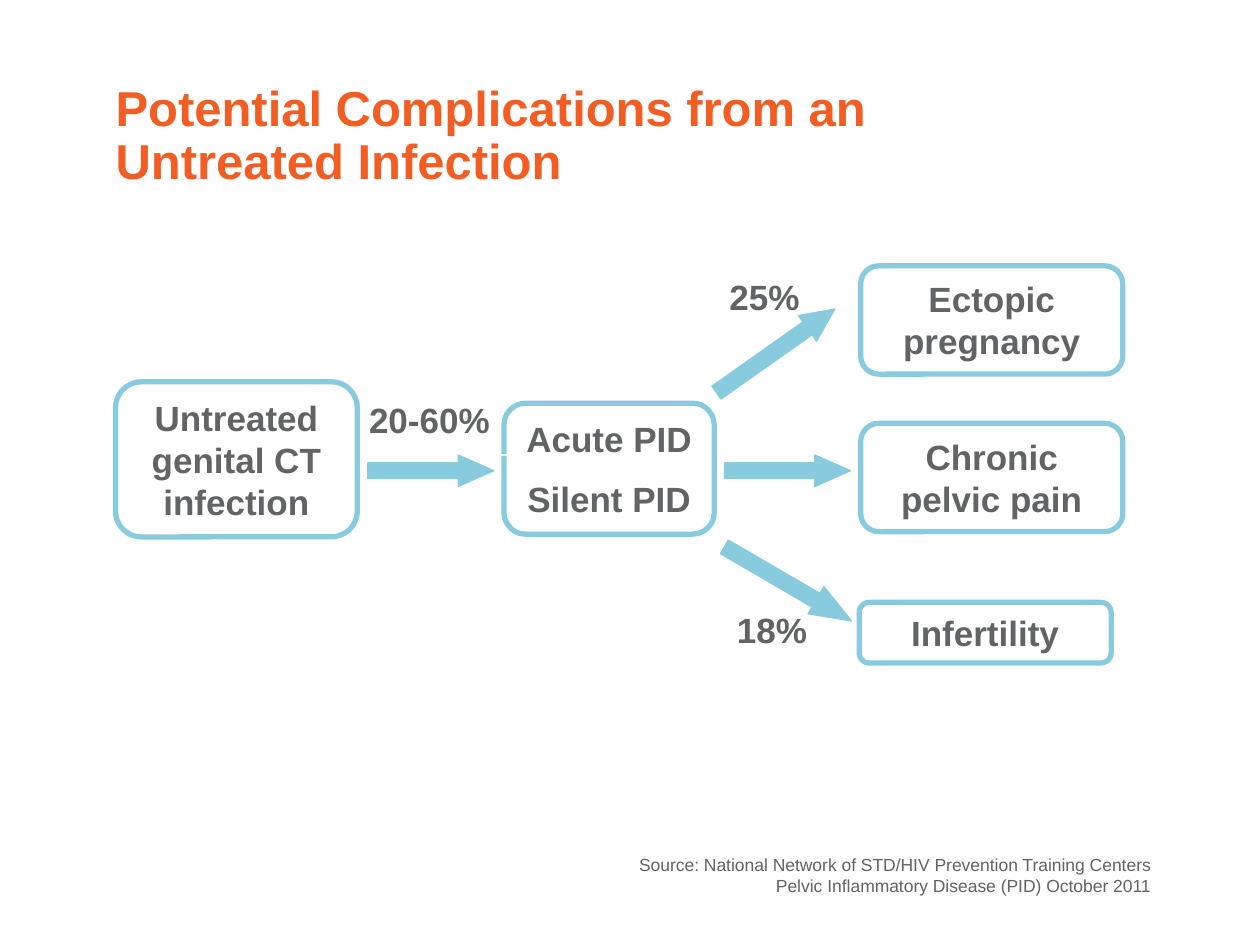
from lxml import etree
from pptx import Presentation
from pptx.dml.color import RGBColor
from pptx.enum.shapes import MSO_CONNECTOR, MSO_SHAPE
from pptx.enum.text import MSO_ANCHOR, PP_ALIGN
from pptx.oxml.ns import qn
from pptx.util import Pt

ROUNDED = MSO_SHAPE.ROUNDED_RECTANGLE
ARROW = MSO_SHAPE.RIGHT_ARROW
STRAIGHT = MSO_CONNECTOR.STRAIGHT
LEFT, CENTER, RIGHT = PP_ALIGN.LEFT, PP_ALIGN.CENTER, PP_ALIGN.RIGHT
TOP, MIDDLE = MSO_ANCHOR.TOP, MSO_ANCHOR.MIDDLE

ORANGE, GRAY, BLUE, WHITE = "F15D22", "616365", "88CBDF", "FFFFFF"
FONT = "Arial"
ARROW_HEIGHT = 18

TITLE = "Potential Complications from an Untreated Infection"
TITLE_FRAME = (59, 43.9, 499, 68.4)
SOURCE = [
    "Source: National Network of STD/HIV Prevention Training Centers",
    "Pelvic Inflammatory Disease (PID) October 2011",
]
SOURCE_FRAME = (234, 484.6, 430.5, 31.7)
BOXES = [
    (["Untreated genital CT infection"], (66, 218.2, 138.2, 88.6)),
    (["Ectopic pregnancy"], (491.8, 151.9, 149.8, 61.9)),
    (["Infertility"], (491, 344.2, 144, 34.6)),
    (["Chronic pelvic pain"], (491.8, 241.9, 149.8, 61.9)),
    (["Acute PID", "Silent PID"], (288, 230.4, 120.2, 74.9)),
]
ARROWS = [
    (414, 260, 72, 0, 1.13),
    (401.8, 191.5, 82.8, 324.8, 1.06),
    (408.2, 324.7, 84.2, 30.2, 1.31),
    (210.2, 260, 72, 0, 1.13),
]
LABELS = [
    ("25%", (409.7, 154.1, 64.8, 31.7)),
    ("18%", (414, 344.2, 90, 31)),
    ("20-60%", (203.8, 223.9, 84.2, 31)),
]
GUIDE = (216, 260, 336, 260)


def color(value):
    return RGBColor.from_string(value)


def points(values):
    return [Pt(value) for value in values]


def write(shape, lines, size, text_color, bold, align, anchor, gap=0, spacing=1.0):
    frame = shape.text_frame
    frame.word_wrap = True
    frame.vertical_anchor = anchor
    for index, line in enumerate(lines):
        paragraph = frame.paragraphs[0] if index == 0 else frame.add_paragraph()
        paragraph.alignment = align
        paragraph.line_spacing = spacing
        if index:
            paragraph.space_before = Pt(gap)
        run = paragraph.add_run()
        run.text = line
        run.font.name = FONT
        run.font.size = Pt(size)
        run.font.bold = bold
        run.font.color.rgb = color(text_color)


def add_text(slide, frame, *style, **spacing):
    write(slide.shapes.add_textbox(*points(frame)), *style, **spacing)


def add_box(slide, lines, frame):
    shape = slide.shapes.add_shape(ROUNDED, *points(frame))
    shape.shadow.inherit = False
    shape.fill.background()
    shape.line.color.rgb = color(BLUE)
    shape.line.width = Pt(3)
    write(shape, lines, 20, GRAY, True, CENTER, MIDDLE, gap=10)


def add_guide(slide):
    line = slide.shapes.add_connector(STRAIGHT, *points(GUIDE))
    line.line.color.rgb = color(WHITE)
    line.line.width = Pt(0.75)
    etree.SubElement(line._element.spPr, qn("a:effectLst"))


def add_arrow(slide, left, top, width, rotation, head):
    shape = slide.shapes.add_shape(ARROW, *points((left, top, width, ARROW_HEIGHT)))
    shape.adjustments[0] = 0.5
    shape.adjustments[1] = head
    shape.rotation = rotation
    shape.shadow.inherit = False
    shape.fill.solid()
    shape.fill.fore_color.rgb = color(BLUE)
    shape.line.color.rgb = color(BLUE)
    shape.line.width = Pt(0.75)


def main():
    presentation = Presentation()
    presentation.slide_width, presentation.slide_height = Pt(720), Pt(540)
    slide = presentation.slides.add_slide(presentation.slide_layouts[6])

    add_text(slide, TITLE_FRAME, [TITLE], 28, ORANGE, True, LEFT, MIDDLE, spacing=0.9)
    for lines, frame in BOXES:
        add_box(slide, lines, frame)
    add_guide(slide)
    for arrow in ARROWS:
        add_arrow(slide, *arrow)
    for label, frame in LABELS:
        add_text(slide, frame, [label], 20, GRAY, True, LEFT, TOP)
    add_text(slide, SOURCE_FRAME, SOURCE, 10, GRAY, False, RIGHT, TOP)

    presentation.save("out.pptx")


if __name__ == "__main__":
    main()
